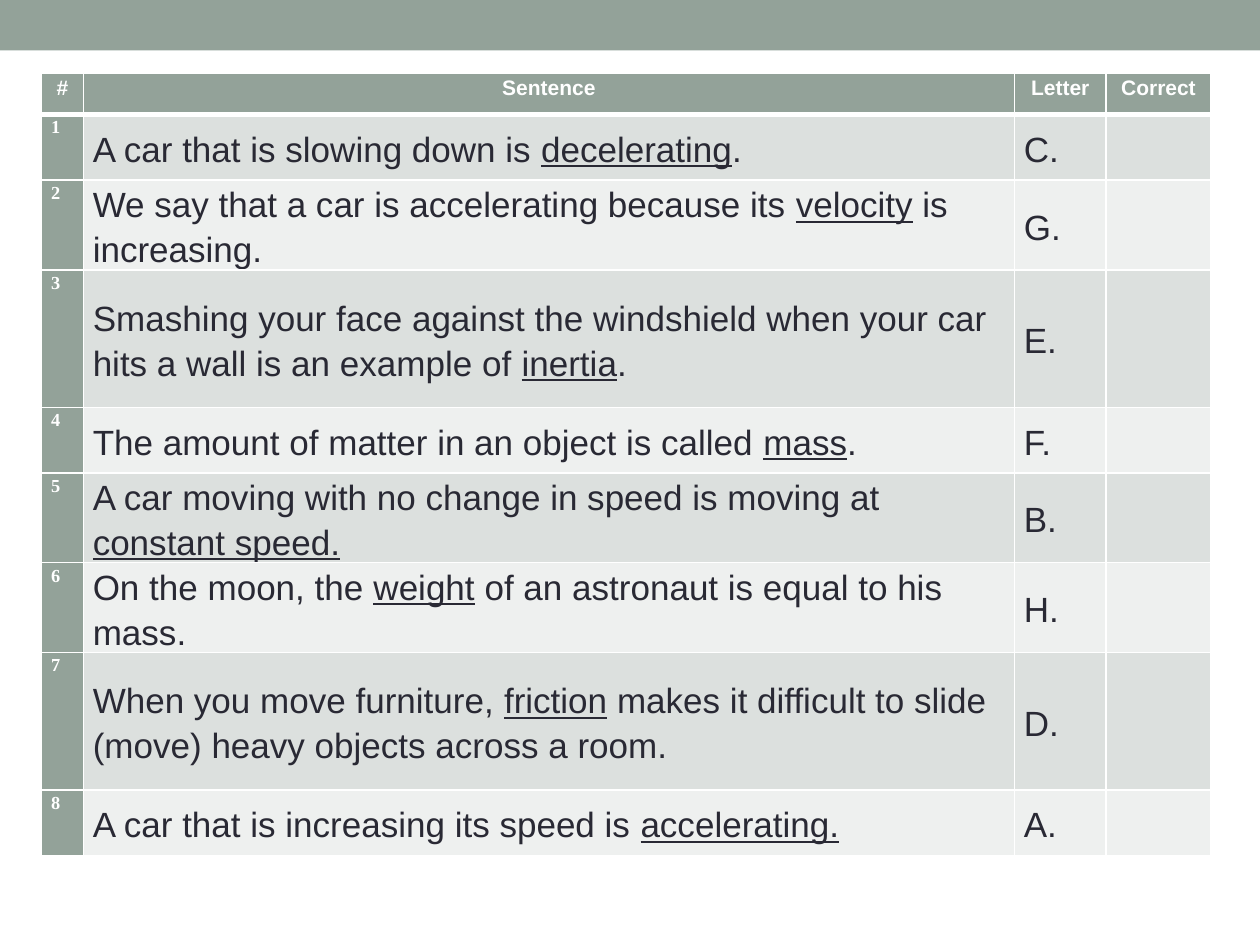
"""Build a slide with a table of science sentences and their answer letters."""
from dataclasses import dataclass
from typing import Optional

from lxml.etree import SubElement
from pptx import Presentation
from pptx.dml.color import RGBColor
from pptx.enum.shapes import MSO_SHAPE
from pptx.enum.text import MSO_ANCHOR, PP_ALIGN
from pptx.oxml.ns import qn
from pptx.util import Cm, Pt

SAGE = RGBColor(0x93, 0xA2, 0x99)
DARK = RGBColor(0xDC, 0xE0, 0xDE)
LIGHT = RGBColor(0xEE, 0xF0, 0xEF)
INK = RGBColor(0x29, 0x29, 0x34)
WHITE = RGBColor(0xFF, 0xFF, 0xFF)

HEADS = ("#", "Sentence", "Letter", "Correct")
WIDTHS = (0.84, 18.77, 1.85, 2.11)
HEAD_ROW, SHORT, TALL = 0.84, 1.32, 2.77


@dataclass(frozen=True)
class Style:
    font: str
    size: float
    color: RGBColor
    bold: bool
    align: PP_ALIGN
    anchor: MSO_ANCHOR
    space: float


@dataclass(frozen=True)
class Item:
    start: str
    key: str
    end: str
    letter: str
    height: float = SHORT


HEAD = Style("Arial", 12, WHITE, True, PP_ALIGN.CENTER, MSO_ANCHOR.TOP, 6)
COUNT = Style("Times New Roman", 10.5, WHITE, True, PP_ALIGN.JUSTIFY, MSO_ANCHOR.TOP, 6)
BODY = Style("Arial", 20, INK, False, PP_ALIGN.LEFT, MSO_ANCHOR.MIDDLE, 0)

ITEMS = (
    Item("A car that is slowing down is ", "decelerating", ".", "C."),
    Item("We say that a car is accelerating because its ", "velocity",
         " is increasing.", "G."),
    Item("Smashing your face against the windshield when your car hits a wall "
         "is an example of ", "inertia", ".", "E.", TALL),
    Item("The amount of matter in an object is called ", "mass", ".", "F."),
    Item("A car moving with no change in speed is moving at ",
         "constant speed.", "", "B."),
    Item("On the moon, the ", "weight",
         " of an astronaut is equal to his mass.", "H."),
    Item("When you move furniture, ", "friction",
         " makes it difficult to slide (move) heavy objects across a room.",
         "D.", TALL),
    Item("A car that is increasing its speed is ", "accelerating.", "", "A."),
)


def add_edges(cell, base: float) -> None:
    """Draw white borders around a cell, with the given bottom width."""
    props = cell._tc.get_or_add_tcPr()
    for side, width in (("L", 1), ("R", 1), ("T", 1), ("B", base)):
        line = SubElement(props, qn(f"a:ln{side}"), w=str(Pt(width)))
        fill = SubElement(line, qn("a:solidFill"))
        SubElement(fill, qn("a:srgbClr"), val=str(WHITE))


def fill_cell(cell, parts: tuple[str, ...], fill: RGBColor,
              style: Optional[Style] = None, base: float = 1) -> None:
    """Fill a cell with text parts, underlining every second part."""
    add_edges(cell, base)
    cell.fill.solid()
    cell.fill.fore_color.rgb = fill
    cell.margin_left = cell.margin_right = Cm(0.19)
    cell.margin_top = cell.margin_bottom = 0
    if style is None:
        return
    cell.vertical_anchor = style.anchor
    para = cell.text_frame.paragraphs[0]
    para.alignment = style.align
    para.line_spacing = 1.15
    para.space_before = para.space_after = Pt(style.space)
    for place, part in enumerate(parts):
        if not part:
            continue
        run = para.add_run()
        run.text = part
        font = run.font
        font.name, font.size, font.bold = style.font, Pt(style.size), style.bold
        font.color.rgb = style.color
        font.underline = place % 2 == 1


def add_bar(slide, width: int) -> None:
    """Draw the band along the top of the slide."""
    bar = slide.shapes.add_shape(MSO_SHAPE.RECTANGLE, 0, 0, width, Cm(1.02))
    bar.shadow.inherit = False
    bar.fill.solid()
    bar.fill.fore_color.rgb = SAGE
    bar.line.fill.background()


def add_grid(slide) -> None:
    """Draw the table of sentences."""
    heights = (HEAD_ROW, *(item.height for item in ITEMS))
    table = slide.shapes.add_table(
        len(heights), len(WIDTHS), Cm(0.84), Cm(1.47),
        Cm(sum(WIDTHS)), Cm(sum(heights))).table
    table.first_col = True
    for column, width in zip(table.columns, WIDTHS):
        column.width = Cm(width)
    for row, height in zip(table.rows, heights):
        row.height = Cm(height)
    for col, head in enumerate(HEADS):
        fill_cell(table.cell(0, col), (head,), SAGE, HEAD, 3)
    for row, item in enumerate(ITEMS, 1):
        shade = DARK if row % 2 else LIGHT
        fill_cell(table.cell(row, 0), (str(row),), SAGE, COUNT)
        fill_cell(table.cell(row, 1), (item.start, item.key, item.end), shade, BODY)
        fill_cell(table.cell(row, 2), (item.letter,), shade, BODY)
        fill_cell(table.cell(row, 3), (), shade)


def main() -> None:
    """Build and save the deck."""
    deck = Presentation()
    deck.slide_width, deck.slide_height = Cm(25.4), Cm(19.05)
    slide = deck.slides.add_slide(deck.slide_layouts[6])
    add_bar(slide, deck.slide_width)
    add_grid(slide)
    deck.save("out.pptx")


if __name__ == "__main__":
    main()
